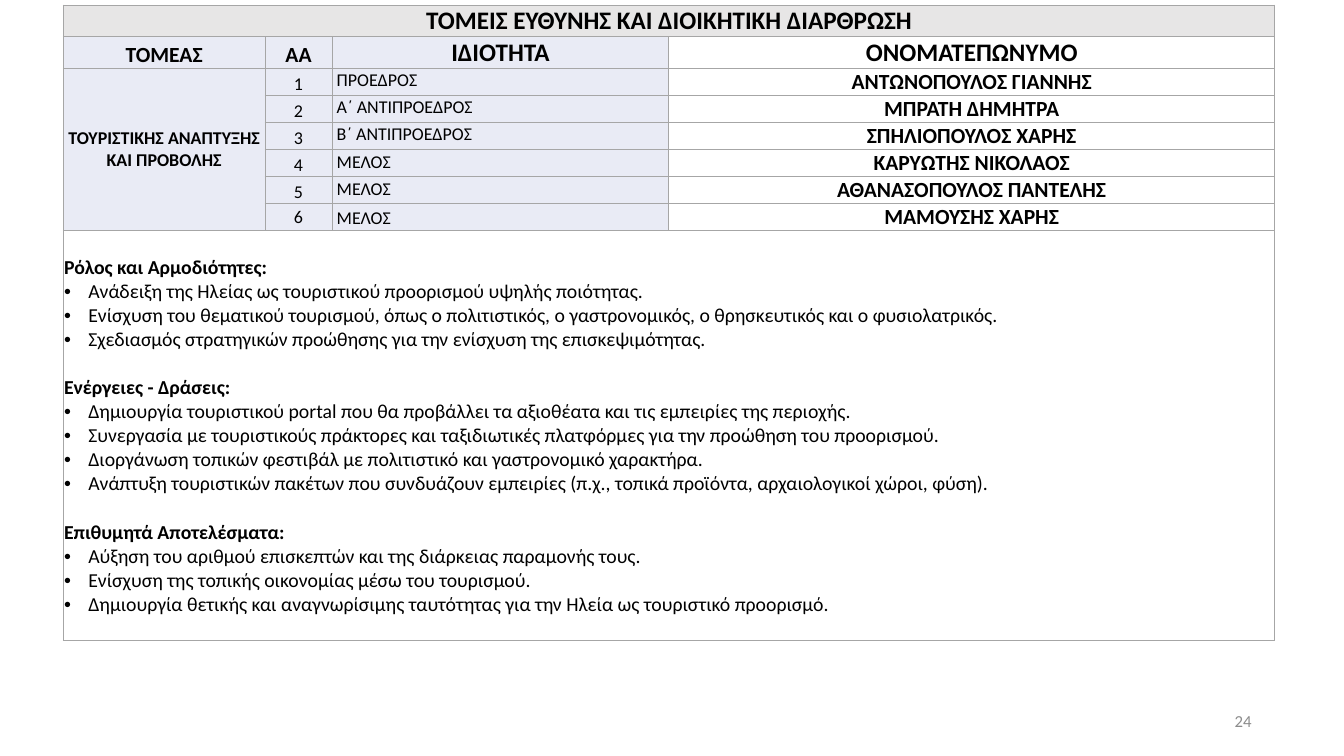
from dataclasses import dataclass

from lxml.etree import SubElement
from pptx import Presentation
from pptx.dml.color import RGBColor
from pptx.enum.text import MSO_ANCHOR, PP_ALIGN
from pptx.oxml.ns import qn
from pptx.util import Cm, Pt


@dataclass(frozen=True)
class Theme:
    font: str = "Calibri"
    ink: str = "000000"
    muted: str = "8C8C8C"
    border: str = "A6A6A6"
    band: str = "E7E6E6"
    tint: str = "E9EBF5"
    paper: str = "FFFFFF"
    heading: float = 28
    name: float = 24
    body: float = 22
    label: float = 20
    page: float = 18.7


TITLE = "ΤΟΜΕΙΣ ΕΥΘΥΝΗΣ ΚΑΙ ΔΙΟΙΚΗΤΙΚΉ ΔΙΑΡΘΡΩΣΗ"
SECTOR = "ΤΟΥΡΙΣΤΙΚΗΣ ΑΝΑΠΤΥΞΗΣ ΚΑΙ ΠΡΟΒΟΛΗΣ"
MEMBERS = [
    ("ΠΡΟΕΔΡΟΣ", "ΑΝΤΩΝΟΠΟΥΛΟΣ ΓΙΑΝΝΗΣ"),
    ("Α΄ ΑΝΤΙΠΡΟΕΔΡΟΣ", "ΜΠΡΑΤΗ ΔΗΜΗΤΡΑ"),
    ("Β΄ ΑΝΤΙΠΡΟΕΔΡΟΣ", "ΣΠΗΛΙΟΠΟΥΛΟΣ ΧΑΡΗΣ"),
    ("ΜΕΛΟΣ", "ΚΑΡΥΩΤΗΣ ΝΙΚΟΛΑΟΣ"),
    ("ΜΕΛΟΣ", "ΑΘΑΝΑΣΟΠΟΥΛΟΣ ΠΑΝΤΕΛΗΣ"),
    ("ΜΕΛΟΣ", "ΜΑΜΟΥΣΗΣ ΧΑΡΗΣ"),
]
SECTIONS = {
    "Ρόλος και Αρμοδιότητες:": [
        "Ανάδειξη της Ηλείας ως τουριστικού προορισμού υψηλής ποιότητας.",
        "Ενίσχυση του θεματικού τουρισμού, όπως ο πολιτιστικός, ο γαστρονομικός, "
        "ο θρησκευτικός και ο φυσιολατρικός.",
        "Σχεδιασμός στρατηγικών προώθησης για την ενίσχυση της επισκεψιμότητας.",
    ],
    "Ενέργειες - Δράσεις:": [
        "Δημιουργία τουριστικού portal που θα προβάλλει τα αξιοθέατα και τις εμπειρίες της περιοχής.",
        "Συνεργασία με τουριστικούς πράκτορες και ταξιδιωτικές πλατφόρμες "
        "για την προώθηση του προορισμού.",
        "Διοργάνωση τοπικών φεστιβάλ με πολιτιστικό και γαστρονομικό χαρακτήρα.",
        "Ανάπτυξη τουριστικών πακέτων που συνδυάζουν εμπειρίες "
        "(π.χ., τοπικά προϊόντα, αρχαιολογικοί χώροι, φύση).",
    ],
    "Επιθυμητά Αποτελέσματα:": [
        "Αύξηση του αριθμού επισκεπτών και της διάρκειας παραμονής τους.",
        "Ενίσχυση της τοπικής οικονομίας μέσω του τουρισμού.",
        "Δημιουργία θετικής και αναγνωρίσιμης ταυτότητας για την Ηλεία ως τουριστικό προορισμό.",
    ],
}
COLUMNS = [7.92, 2.64, 13.23, 23.8]
ROWS = [1.21, 1.21] + [1.05] * len(MEMBERS) + [16.1]
TIGHT = {"margin_left": Cm(0.03), "margin_right": Cm(0.03),
         "margin_top": Cm(0.03), "margin_bottom": 0}
ROLE = {"margin_left": Cm(0.18), "margin_right": Cm(0.18), "margin_top": 0}


def apply(target, values):
    for key, value in values.items():
        setattr(target, key, value)


class SlideBuilder:
    def __init__(self, slide, theme):
        self.slide = slide
        self.theme = theme

    def add_words(self, paragraph, text, size, bold=False, color=None, **layout):
        apply(paragraph, layout)
        run = paragraph.add_run()
        run.text = text
        apply(run.font, {"name": self.theme.font, "size": Pt(size), "bold": bold})
        run.font.color.rgb = RGBColor.from_string(color or self.theme.ink)

    def bullet(self, paragraph):
        properties = paragraph._p.get_or_add_pPr()
        properties.set("marL", str(Cm(0.95)))
        properties.set("indent", str(-Cm(0.95)))
        SubElement(properties, qn("a:buFont"), typeface="Arial")
        SubElement(properties, qn("a:buChar"), char="•")

    def frame(self, cell, fill):
        """Give a cell its thin border on all sides, its fill and tight margins."""
        properties = cell._tc.get_or_add_tcPr()
        for side in ("lnL", "lnR", "lnT", "lnB"):
            line = SubElement(properties, qn(f"a:{side}"), w=str(Pt(1)))
            solid = SubElement(line, qn("a:solidFill"))
            SubElement(solid, qn("a:srgbClr"), val=self.theme.border)
        cell.fill.solid()
        cell.fill.fore_color.rgb = RGBColor.from_string(fill)
        apply(cell, TIGHT)

    def fill_for(self, row, column):
        if row == 0:
            return self.theme.band
        return self.theme.paper if column == 3 or row == len(ROWS) - 1 else self.theme.tint

    def table(self, left, top):
        grid = self.slide.shapes.add_table(
            len(ROWS), len(COLUMNS), Cm(left), Cm(top),
            Cm(sum(COLUMNS)), Cm(sum(ROWS))).table
        apply(grid, {"first_row": False, "horz_banding": False})
        for column, width in zip(grid.columns, COLUMNS):
            column.width = Cm(width)
        for r, height in enumerate(ROWS):
            grid.rows[r].height = Cm(height)
            for c in range(len(COLUMNS)):
                self.frame(grid.cell(r, c), self.fill_for(r, c))
        last = len(ROWS) - 1
        for first, end in (((0, 0), (0, 3)), ((2, 0), (last - 1, 0)), ((last, 0), (last, 3))):
            grid.cell(*first).merge(grid.cell(*end))
        return grid

    def cell(self, cell, text, size, bold=False, anchor=MSO_ANCHOR.BOTTOM,
             margins=None, **layout):
        apply(cell, {"vertical_anchor": anchor, **(margins or {})})
        layout = {"alignment": PP_ALIGN.CENTER, **layout}
        self.add_words(cell.text_frame.paragraphs[0], text, size, bold, **layout)

    def sections(self, cell, sections):
        apply(cell, {"vertical_anchor": MSO_ANCHOR.BOTTOM, "margin_bottom": Cm(0.95)})
        text = cell.text_frame
        for index, (heading, items) in enumerate(sections.items()):
            paragraph = text.add_paragraph() if index else text.paragraphs[0]
            gap = {"space_before": Pt(27)} if index else {}
            self.add_words(paragraph, heading, self.theme.body, True, **gap)
            for item in items:
                paragraph = text.add_paragraph()
                self.bullet(paragraph)
                self.add_words(paragraph, item, self.theme.body)

    def page_number(self, number, left, top, width, height):
        text = self.slide.shapes.add_textbox(
            Cm(left), Cm(top), Cm(width), Cm(height)).text_frame
        apply(text, {"word_wrap": True, "vertical_anchor": MSO_ANCHOR.MIDDLE,
                     **dict.fromkeys(TIGHT, 0)})
        self.add_words(text.paragraphs[0], number, self.theme.page,
                       color=self.theme.muted, alignment=PP_ALIGN.RIGHT)


def main():
    theme = Theme()
    deck = Presentation()
    apply(deck, {"slide_width": Cm(52.81), "slide_height": Cm(29.69)})
    builder = SlideBuilder(deck.slides.add_slide(deck.slide_layouts[6]), theme)

    grid = builder.table(2.49, 0.2)
    builder.cell(grid.cell(0, 0), TITLE, theme.heading, True, MSO_ANCHOR.MIDDLE)
    headings = [("ΤΟΜΕΑΣ", theme.name), ("ΑΑ", theme.name),
                ("ΙΔΙΟΤΗΤΑ", theme.heading), ("ΟΝΟΜΑΤΕΠΩΝΥΜΟ", theme.heading)]
    for column, (heading, size) in enumerate(headings):
        builder.cell(grid.cell(1, column), heading, size, True)
    builder.cell(grid.cell(2, 0), SECTOR, theme.label, True, MSO_ANCHOR.MIDDLE)
    for number, (role, name) in enumerate(MEMBERS, start=1):
        row = number + 1
        is_last = number == len(MEMBERS)
        builder.cell(grid.cell(row, 1), str(number), theme.label,
                     anchor=MSO_ANCHOR.MIDDLE if is_last else MSO_ANCHOR.BOTTOM)
        builder.cell(grid.cell(row, 2), role, theme.label,
                     anchor=MSO_ANCHOR.MIDDLE if is_last else MSO_ANCHOR.TOP,
                     margins=ROLE, alignment=PP_ALIGN.LEFT, line_spacing=1.07)
        builder.cell(grid.cell(row, 3), name, theme.name, True)
    builder.sections(grid.cell(len(ROWS) - 1, 0), SECTIONS)
    builder.page_number("24", 37.29, 27.53, 11.89, 1.57)
    deck.save("out.pptx")


if __name__ == "__main__":
    main()
